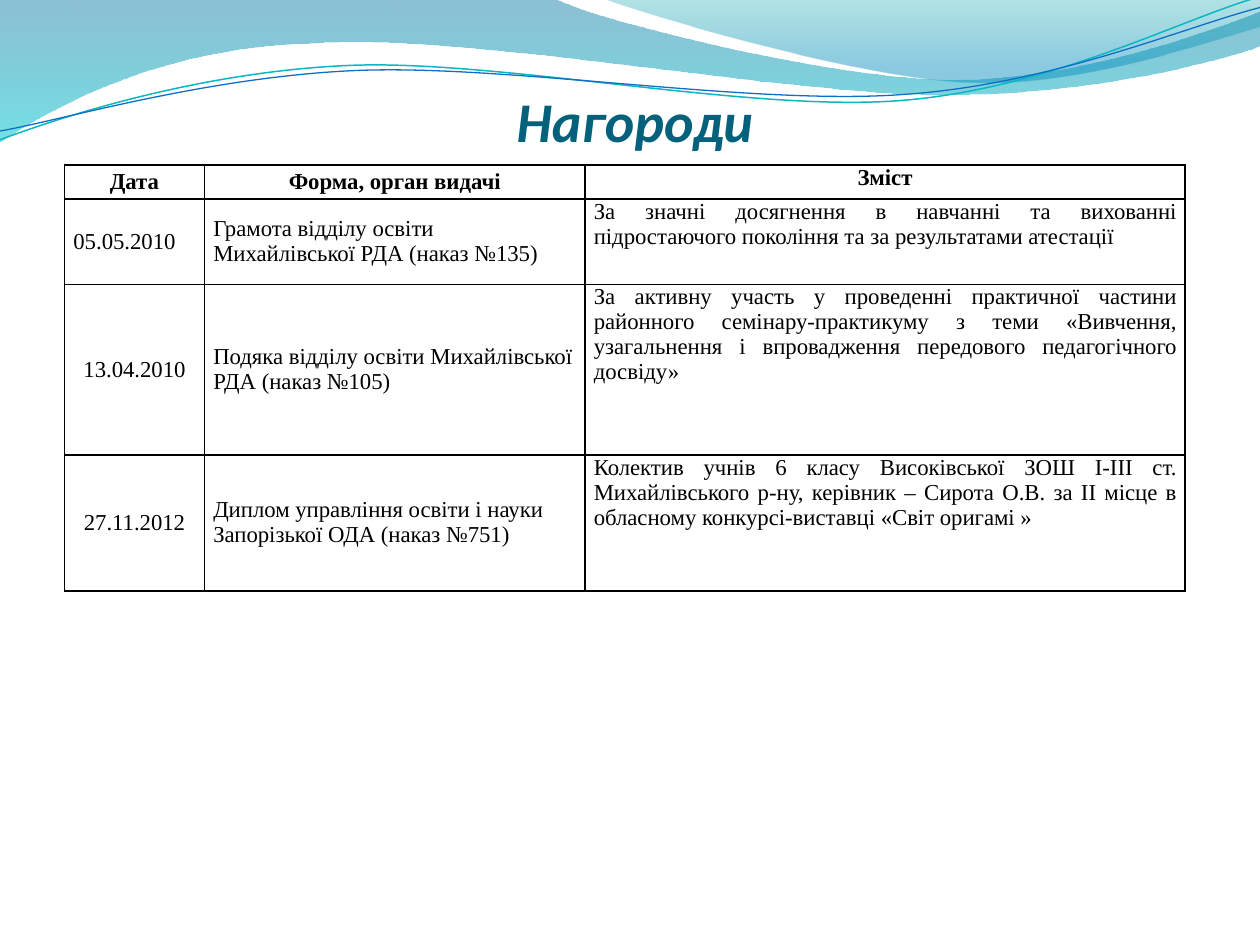
import dataclasses

import pptx
import pptx.dml.color
import pptx.enum.text
import pptx.oxml
import pptx.oxml.ns
import pptx.util

Cm = pptx.util.Cm
Pt = pptx.util.Pt
ALIGN = pptx.enum.text.PP_ALIGN
ANCHOR = pptx.enum.text.MSO_ANCHOR
qn = pptx.oxml.ns.qn
NS = pptx.oxml.ns.nsdecls("a")


@dataclasses.dataclass(frozen=True)
class Theme:
    title_font: str = "Calibri"
    title_size: int = 32
    title_color: str = "04617B"
    table_font: str = "Times New Roman"
    table_size: int = 13
    table_color: str = "000000"
    border: float = 1
    # Gradient stops: position, colour, opacity in percent
    wide_wave: tuple = ((0, "0074A1", 45), (100, "00C6CF", 55))
    right_wave: tuple = ((0, "00A1A9", 30), (80, "008BBF", 45))
    teal_line: tuple = ("0AB8BF", 0.85)
    blue_line: tuple = ("0F6FC6", 0.75)


THEME = Theme()

# Outlines in tenths of the slide width: a start point, then segments that are
# either a line (x, y) or a cubic curve (x1, y1, x2, y2, x, y).
WIDE_WAVE = [(0, 0), (4.4, -0.01), (4.76, 0.17, 6.64, 0.63, 7.58, 0.63),
             (8.53, 0.63, 9.58, 0.26, 10, 0.09), (10.01, 0.36),
             (9.83, 0.44, 8.7, 0.76, 7.46, 0.75),
             (6.22, 0.75, 3.82, 0.28, 2.57, 0.34),
             (1.29, 0.36, 0.46, 0.83, -0.01, 1.13), (0, 0)]
RIGHT_WAVE = [(4.79, -0.01), (5.09, 0.11, 6.82, 0.62, 7.69, 0.65),
              (8.56, 0.69, 9.61, 0.32, 10, 0.21), (10, 0), (4.79, -0.01)]
TEAL_LINE = [(0, 1.11), (0.48, 0.93, 1.58, 0.57, 2.77, 0.52),
             (3.95, 0.47, 5.93, 0.89, 7.13, 0.8),
             (8.33, 0.71, 9.38, 0.15, 9.98, -0.02)]
BLUE_LINE = [(0, 1.04), (0.47, 0.96, 1.64, 0.61, 2.83, 0.56),
             (4.03, 0.51, 5.97, 0.84, 7.17, 0.75),
             (8.36, 0.67, 9.41, 0.21, 10, 0.06)]

TITLE = "Нагороди"
HEADERS = ("Дата", "Форма, орган видачі", "Зміст")
AWARDS = [
    ("05.05.2010", "Грамота відділу освіти Михайлівської РДА (наказ №135)",
     "За значні досягнення в навчанні та вихованні підростаючого покоління "
     "та за результатами атестації"),
    ("13.04.2010", "Подяка відділу освіти Михайлівської РДА (наказ №105)",
     "За активну участь у проведенні практичної частини районного "
     "семінару-практикуму з теми «Вивчення, узагальнення і впровадження "
     "передового педагогічного досвіду»"),
    ("27.11.2012",
     "Диплом управління освіти і науки Запорізької ОДА (наказ №751)",
     "Колектив учнів 6 класу Високівської ЗОШ І-ІІІ ст. Михайлівського р-ну, "
     "керівник – Сирота О.В. за ІІ місце в обласному конкурсі-виставці "
     "«Світ оригамі »"),
]
COL_WIDTHS = (2.82, 7.67, 12.1)
ROW_HEIGHTS = (0.68, 1.73, 3.43, 2.74)


def rgb(color):
    return pptx.dml.color.RGBColor.from_string(color)


def format_run(r, font, size, color, bold=False, italic=False):
    r.font.name, r.font.size = font, Pt(size)
    r.font.color.rgb = rgb(color)
    r.font.bold, r.font.italic = bold, italic


def add_outline(s, outline, box, close):
    """Build the outline through its end points, then bend its curved segments."""
    left, top, width = box
    unit = width / 10
    scaled = [[round(origin + v * unit)
               for v, origin in zip(seg, (left, top) * 3)] for seg in outline]
    builder = s.shapes.build_freeform(*scaled[0], scale=1.0)
    builder.add_line_segments([seg[-2:] for seg in scaled[1:]], close=close)
    sp = builder.convert_to_shape()
    sp.shadow.inherit = False
    for line, seg in zip(list(sp.element.iter(qn("a:lnTo"))), scaled[1:]):
        if len(seg) == 6:
            pts = "".join(f'<a:pt x="{x - sp.left}" y="{y - sp.top}"/>'
                          for x, y in zip(seg[::2], seg[1::2]))
            curve = pptx.oxml.parse_xml(
                f'<a:cubicBezTo {NS}>{pts}</a:cubicBezTo>')
            line.getparent().replace(line, curve)
    return sp


def fill_gradient(sp, stops):
    sp.fill.gradient()
    sp.fill.gradient_angle = 270
    for stop, (position, color, _) in zip(sp.fill.gradient_stops, stops):
        stop.position = position / 100
        stop.color.rgb = rgb(color)
    for clr, (_, _, opacity) in zip(sp.element.spPr.iter(qn("a:srgbClr")), stops):
        clr.append(pptx.oxml.parse_xml(f'<a:alpha {NS} val="{opacity * 1000}"/>'))


def add_waves(s, box):
    for outline, stops in ((WIDE_WAVE, THEME.wide_wave),
                           (RIGHT_WAVE, THEME.right_wave)):
        sp = add_outline(s, outline, box, close=True)
        fill_gradient(sp, stops)
        sp.line.fill.background()
    for outline, (color, width) in ((TEAL_LINE, THEME.teal_line),
                                    (BLUE_LINE, THEME.blue_line)):
        sp = add_outline(s, outline, box, close=False)
        sp.fill.background()
        sp.line.color.rgb = rgb(color)
        sp.line.width = Pt(width)


def place_title(s, box):
    sp = s.shapes.title
    sp.left, sp.top, sp.width, sp.height = box
    s.shapes.element.append(sp.element)  # in front of the waves
    tf = sp.text_frame
    tf.text = TITLE
    tf.word_wrap = True
    tf.auto_size = pptx.enum.text.MSO_AUTO_SIZE.NONE
    tf.vertical_anchor = ANCHOR.BOTTOM
    tf.margin_left = tf.margin_right = tf.margin_bottom = 0
    p = tf.paragraphs[0]
    p.alignment = ALIGN.CENTER
    format_run(p.runs[0], THEME.title_font, THEME.title_size,
               THEME.title_color, bold=True, italic=True)


def add_borders(cell):
    tcPr = cell._tc.get_or_add_tcPr()
    for i, side in enumerate("LRTB"):
        tcPr.insert(i, pptx.oxml.parse_xml(
            f'<a:ln{side} {NS} w="{Pt(THEME.border)}">'
            f'<a:solidFill><a:srgbClr val="{THEME.table_color}"/></a:solidFill>'
            f'</a:ln{side}>'))


def cell_alignment(row, col):
    if row == 0:
        return ALIGN.CENTER
    if col == 0:
        return ALIGN.LEFT if row == 1 else ALIGN.CENTER
    return ALIGN.LEFT if col == 1 else ALIGN.JUSTIFY


def add_awards_table(s, left, top):
    rows = [HEADERS, *AWARDS]
    table = s.shapes.add_table(len(rows), len(HEADERS), left, top,
                               Cm(sum(COL_WIDTHS)), Cm(sum(ROW_HEIGHTS))).table
    table.first_row = table.horz_banding = False
    for column, width in zip(table.columns, COL_WIDTHS):
        column.width = Cm(width)
    for i, (height, texts) in enumerate(zip(ROW_HEIGHTS, rows)):
        table.rows[i].height = Cm(height)
        for j, text in enumerate(texts):
            cell = table.cell(i, j)
            cell.text_frame.text = text
            cell.fill.background()
            cell.margin_left = cell.margin_right = Cm(0.18)
            cell.margin_top = cell.margin_bottom = 0
            cell.vertical_anchor = ANCHOR.TOP if j == 2 else ANCHOR.MIDDLE
            p = cell.text_frame.paragraphs[0]
            p.alignment = cell_alignment(i, j)
            format_run(p.runs[0], THEME.table_font, THEME.table_size,
                       THEME.table_color, bold=i == 0)
            add_borders(cell)


def main():
    prs = pptx.Presentation()
    prs.slide_width, prs.slide_height = Cm(25.4), Cm(19.05)
    s = prs.slides.add_slide(prs.slide_layouts[5])
    add_waves(s, (0, 0, prs.slide_width))
    place_title(s, (Cm(0.5), Cm(1.93), Cm(24.6), Cm(1.17)))
    add_awards_table(s, Cm(1.3), Cm(3.33))
    prs.save("out.pptx")


if __name__ == "__main__":
    main()
